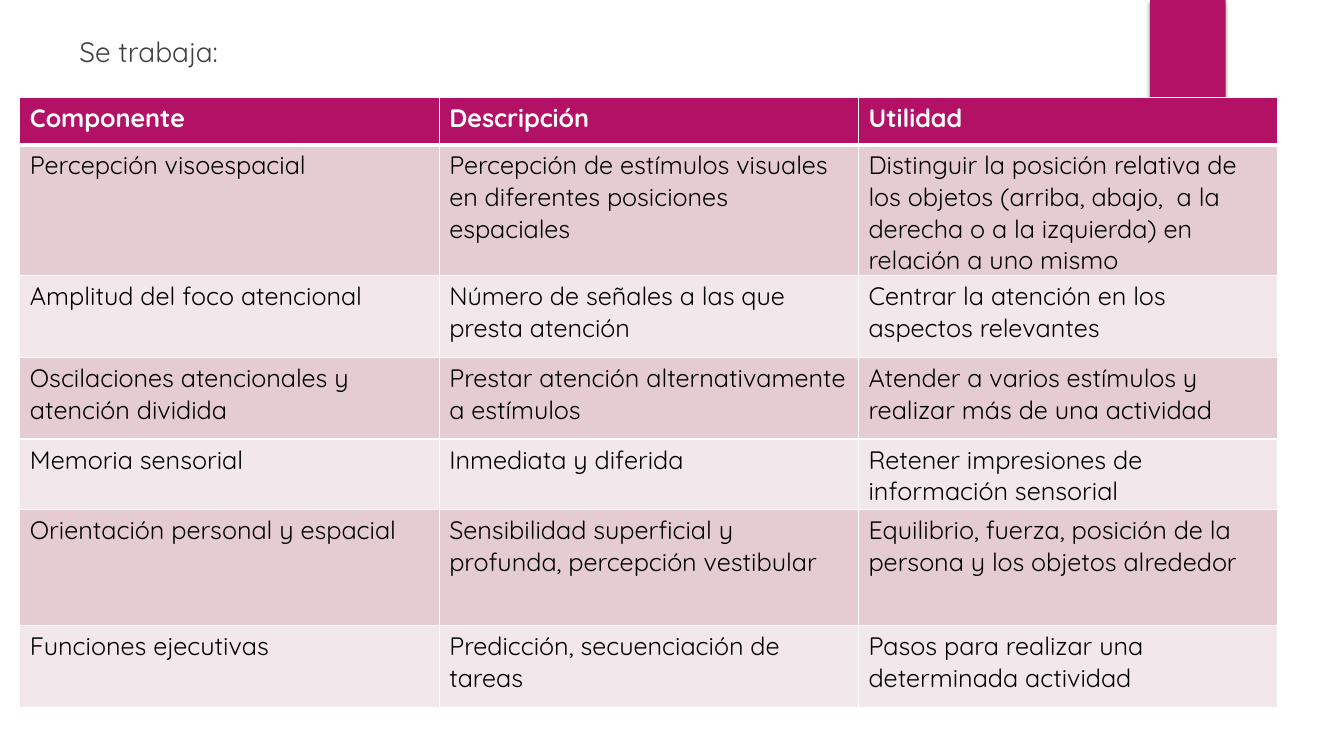
import pptx
import pptx.dml.color
import pptx.enum.shapes
import pptx.oxml
import pptx.oxml.ns
import pptx.util

Pt = pptx.util.Pt
THEME = {
    "font": "Quicksand",
    "accent": "B31166",
    "bands": ["E5CCD3", "F2E7EA"],
    "border": "FFFFFF",
    "header_text": "FFFFFF",
    "body_text": "000000",
    "heading_text": "404040",
    "heading_size": 20,
    "table_size": 18,
}
COLUMN_WIDTH = 299.52
ROWS = [
    (33.84, ["Componente", "Descripción", "Utilidad"]),
    (82.8, ["Percepción visoespacial",
            "Percepción de estímulos visuales en diferentes posiciones espaciales",
            "Distinguir la posición relativa de los objetos (arriba, abajo,  a la derecha "
            "o a la izquierda) en relación a uno mismo"]),
    (58.32, ["Amplitud del foco atencional",
             "Número de señales a las que presta atención",
             "Centrar la atención en los aspectos relevantes"]),
    (58.32, ["Oscilaciones atencionales y atención dividida",
             "Prestar atención alternativamente a estímulos",
             "Atender a varios estímulos y realizar más de una actividad"]),
    (33.84, ["Memoria sensorial", "Inmediata y diferida",
             "Retener impresiones de información sensorial"]),
    (82.8, ["Orientación personal y espacial",
            "Sensibilidad superficial y profunda, percepción vestibular",
            "Equilibrio, fuerza, posición de la persona y los objetos alrededor"]),
    (58.32, ["Funciones ejecutivas", "Predicción, secuenciación de tareas",
             "Pasos para realizar una determinada actividad"]),
]


def rgb(value):
    return pptx.dml.color.RGBColor.from_string(value)


def write(frame, text, size, color, bold=False):
    paragraph = frame.paragraphs[0]
    run = paragraph.add_run()
    run.text = text
    for key, value in {"name": THEME["font"], "size": Pt(size), "bold": bold}.items():
        setattr(run.font, key, value)
    run.font.color.rgb = rgb(color)
    return paragraph


deck = pptx.Presentation()
deck.slide_width, deck.slide_height = Pt(960), Pt(540)
slide = deck.slides.add_slide(deck.slide_layouts[6])
namespace = pptx.oxml.ns.nsdecls("a")

# Ribbon at the top edge
ribbon = slide.shapes.add_shape(pptx.enum.shapes.MSO_SHAPE.RECTANGLE,
                                Pt(821.5), Pt(0), Pt(54), Pt(90))
ribbon.fill.solid()
ribbon.fill.fore_color.rgb = rgb(THEME["accent"])
ribbon.line.fill.background()
ribbon.shadow.inherit = False
effects = ribbon.element.spPr.find(pptx.oxml.ns.qn("a:effectLst"))
effects.append(pptx.oxml.parse_xml(
    f'<a:outerShdw {namespace} blurRad="{Pt(3)}" dist="{Pt(2)}" dir="5400000" rotWithShape="0">'
    '<a:srgbClr val="000000"><a:alpha val="45000"/></a:srgbClr></a:outerShdw>'))

# Heading
heading = slide.shapes.add_textbox(Pt(13.7), Pt(20.9), Pt(856), Pt(296))
heading.text_frame.word_wrap = True
heading_line = write(heading.text_frame, "Se trabaja:", THEME["heading_size"],
                     THEME["heading_text"])
heading_line._p.get_or_add_pPr().set("marL", str(Pt(36)))

# Table of components
components = slide.shapes.add_table(len(ROWS), 3, Pt(14.2), Pt(69.5), Pt(3 * COLUMN_WIDTH),
                                    Pt(sum(height for height, _ in ROWS))).table
for column in components.columns:
    column.width = Pt(COLUMN_WIDTH)

for row, (height, texts) in enumerate(ROWS):
    components.rows[row].height = Pt(height)
    is_header = row == 0
    fill = THEME["accent"] if is_header else THEME["bands"][(row - 1) % 2]
    color = THEME["header_text"] if is_header else THEME["body_text"]
    # The rule under the header is shared with the first body row
    borders = {"lnL": 1, "lnR": 1, "lnT": 3 if row == 1 else 1, "lnB": 3 if is_header else 1}
    for column, text in enumerate(texts):
        cell = components.cell(row, column)
        write(cell.text_frame, text, THEME["table_size"], color, bold=is_header)
        properties = cell._tc.get_or_add_tcPr()
        for side, width in borders.items():
            properties.append(pptx.oxml.parse_xml(
                f'<a:{side} {namespace} w="{Pt(width)}"><a:solidFill>'
                f'<a:srgbClr val="{THEME["border"]}"/></a:solidFill></a:{side}>'))
        cell.fill.solid()
        cell.fill.fore_color.rgb = rgb(fill)

deck.save("out.pptx")
